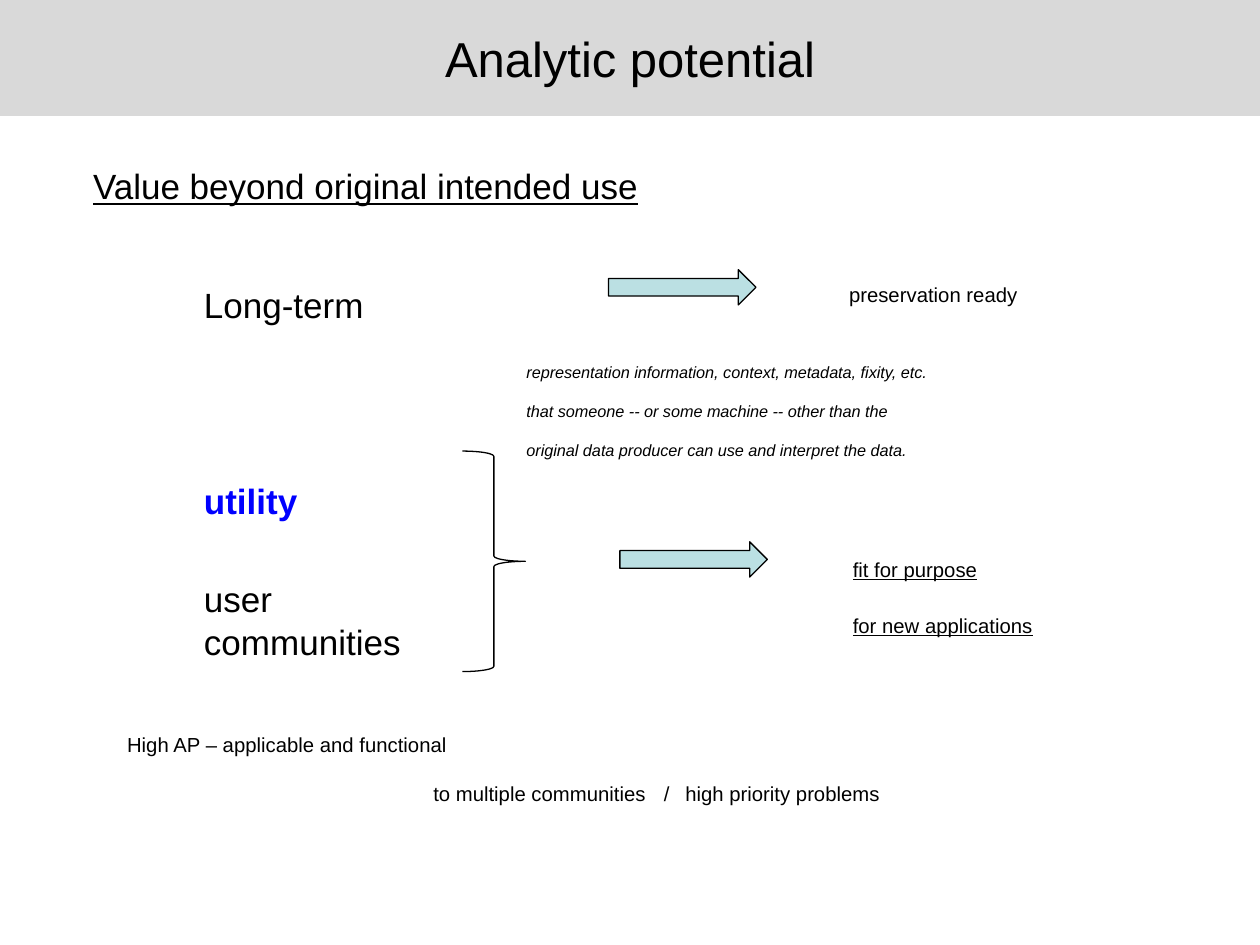
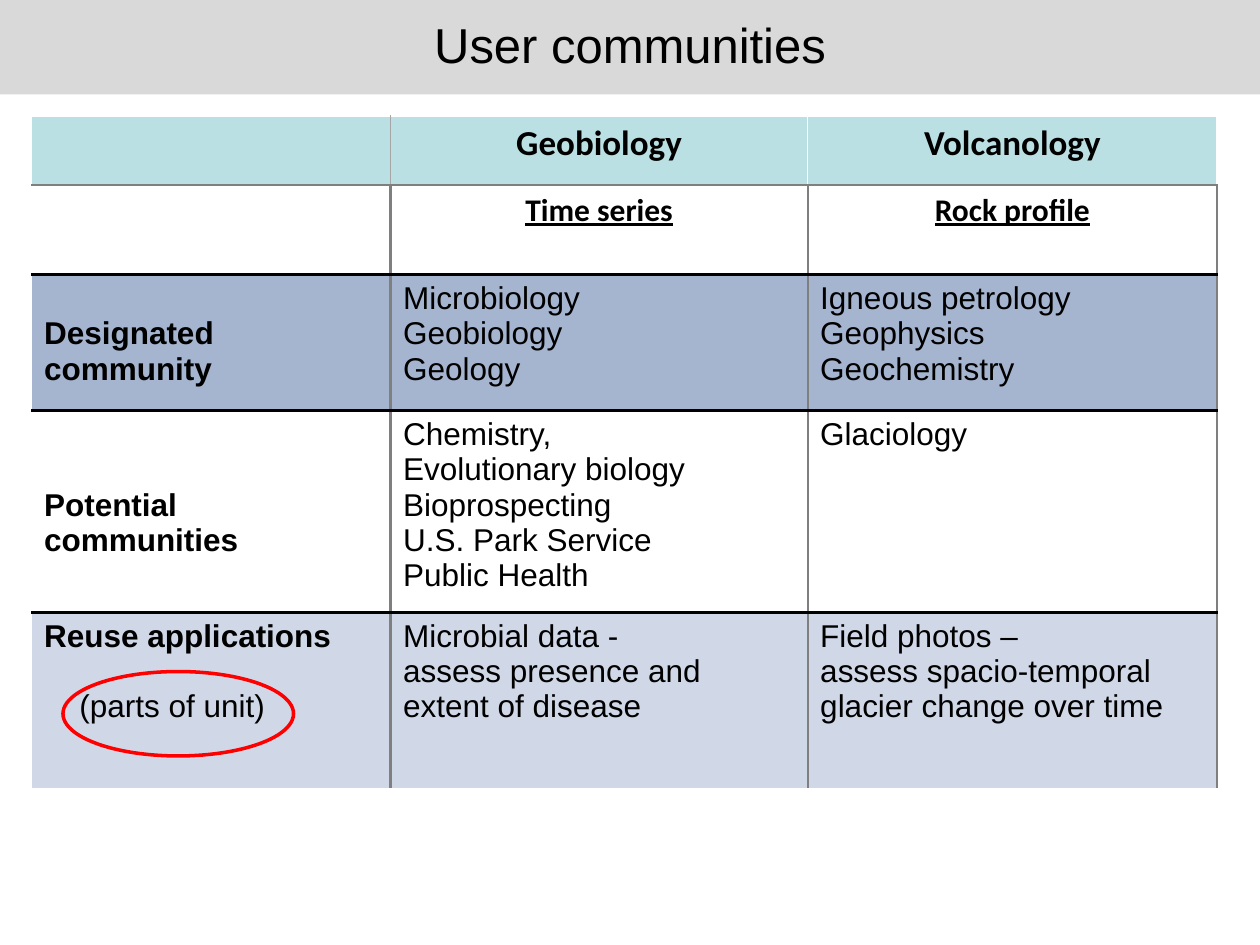
from dataclasses import dataclass

from lxml.etree import SubElement
from pptx import Presentation
from pptx.dml.color import RGBColor
from pptx.enum.shapes import MSO_SHAPE as Shape
from pptx.enum.text import MSO_ANCHOR as Anchor, PP_ALIGN as Align
from pptx.oxml.ns import qn
from pptx.util import Inches, Pt


@dataclass(frozen=True)
class Theme:
    font: str = "Arial"
    heading_font: str = "Calibri"
    black: str = "000000"
    white: str = "FFFFFF"
    band: str = "D9D9D9"
    teal: str = "BBE0E3"
    blue: str = "0000FF"
    red: str = "FF0000"
    slate: str = "A5B4CF"
    pale: str = "D0D8E8"
    rule: str = "7F7F7F"
    light_rule: str = "A6A6A6"
    title: float = 28
    body: float = 20
    table: float = 18
    label: float = 11.6
    note: float = 9.3


THEME = Theme()
COLUMN_WIDTHS = (2.85, 3.31, 3.25)
ROW_HEIGHTS = (0.55, 0.71, 1.08, 1.5, 1.4)
ROW_FILLS = (THEME.teal, THEME.white, THEME.slate, THEME.white, THEME.pale)
HEADINGS = (
    ("", "Geobiology", "Volcanology"),
    ("", "Time series", "Rock profile"),
)
COMMUNITIES = (
    (
        ("Designated", "community"),
        ("Microbiology", "Geobiology", "Geology"),
        ("Igneous petrology", "Geophysics", "Geochemistry"),
    ),
    (
        ("Potential communities",),
        ("Chemistry,", "Evolutionary biology", "Bioprospecting",
         "U.S. Park Service", "Public Health"),
        ("Glaciology",),
    ),
    (
        ("Reuse applications",),
        ("Microbial data -", "assess presence and extent of disease"),
        ("Field photos –", "assess spacio-temporal glacier change over time"),
    ),
)
LABEL_TOP_MARGINS = (0.33, 0.61, 0.05)


def rgb(value):
    return RGBColor.from_string(value)


def set_font(para, size, color=THEME.black, name=THEME.font,
             bold=False, italic=False, underline=False):
    font = para.font
    font.name, font.size = name, Pt(size)
    font.bold, font.italic, font.underline = bold, italic, underline
    font.color.rgb = rgb(color)


def set_indent(para, left):
    para._p.get_or_add_pPr().set("marL", str(Inches(left)))


def set_tabs(para, stops):
    tabs = SubElement(para._p.get_or_add_pPr(), qn("a:tabLst"))
    for stop in stops:
        SubElement(tabs, qn("a:tab"), pos=str(Inches(stop)), algn="l")


def add_line(frame, text, size, indent=0, gap=0, spacing=None, tabs=(), **style):
    para = frame.paragraphs[0]
    if para.text:
        para = frame.add_paragraph()
    para.text = text
    set_indent(para, indent)
    if gap:
        para.space_before = Pt(gap)
    if spacing:
        para.line_spacing = spacing
    if tabs:
        set_tabs(para, tabs)
    set_font(para, size, **style)
    return para


def add_box(page, left, top, width, height):
    box = page.shapes.add_textbox(*map(Inches, (left, top, width, height)))
    box.text_frame.word_wrap = True
    return box.text_frame


def add_preset(page, kind, bounds, fill=None, line=None, weight=0.75):
    shape = page.shapes.add_shape(kind, *map(Inches, bounds))
    shape.shadow.inherit = False
    if fill:
        shape.fill.solid()
        shape.fill.fore_color.rgb = rgb(fill)
    else:
        shape.fill.background()
    if line:
        shape.line.color.rgb = rgb(line)
        shape.line.width = Pt(weight)
    else:
        shape.line.fill.background()
    return shape


def add_page(deck, title, top, height):
    page = deck.slides.add_slide(deck.slide_layouts[6])
    band = add_preset(page, Shape.RECTANGLE, (0, top, 10, height), THEME.band)
    frame = band.text_frame
    frame.vertical_anchor = Anchor.MIDDLE
    add_line(frame, title, THEME.title).alignment = Align.CENTER
    return page


def add_arrow(page, left, top):
    add_preset(page, Shape.RIGHT_ARROW, (left, top, 1.17, 0.28),
               THEME.teal, THEME.black)


def draw_potential(deck):
    page = add_page(deck, "Analytic potential", 0, 0.92)

    body = add_box(page, 0.58, 1.26, 9.42, 3.75)
    add_line(body, "Value beyond original intended use", THEME.body, 0.06, underline=True)
    add_line(body, "Long-term", THEME.body, 0.94, 44)
    add_line(body, "utility", THEME.body, 0.94, 88, color=THEME.blue, bold=True)
    add_line(body, "user\vcommunities", THEME.body, 0.94, 32)

    add_arrow(page, 4.92, 4.3)
    purpose = add_box(page, 6.17, 4.18, 3.83, 0.9)
    add_line(purpose, "fit for purpose", THEME.label, 0.5, spacing=2.0, underline=True)
    add_line(purpose, "for new applications", THEME.label, 0.5, 4, 2.0, underline=True)
    add_preset(page, Shape.RIGHT_BRACE, (3.67, 3.58, 0.5, 1.75), line=THEME.black)

    ready = add_box(page, 6.58, 2, 3.42, 0.5)
    add_line(ready, "preservation ready", THEME.label, 0.06, spacing=2.0)
    add_arrow(page, 4.83, 2.14)

    summary = add_box(page, 0.85, 5.57, 8.32, 1.18)
    add_line(summary, "High AP – applicable and functional", THEME.label, 0.06, spacing=2.0)
    add_line(summary, "\tto multiple communities\t/\thigh priority problems",
             THEME.label, spacing=2.0, tabs=(2.49, 4.32, 4.49))

    note = add_box(page, 4.08, 2.67, 5.76, 1.18)
    for text in ("representation information, context, metadata, fixity, etc.",
                 "that someone -- or some machine -- other than the",
                 "original data producer can use and interpret the data."):
        add_line(note, text, THEME.note, spacing=2.0, italic=True)


def vertical_rule(row, edge):
    if edge == 0 or (row == 0 and edge > 1):
        return THEME.white, 1
    return (THEME.light_rule, 1) if row == 0 else (THEME.rule, 1.5)


def horizontal_rule(edge, column):
    if edge in (0, len(ROW_HEIGHTS)):
        return THEME.white, 1
    if edge == 1:
        return THEME.rule, 1.5 if column == 2 else 1
    return THEME.black, 2.25


def style_cell(cell, row, column):
    sides = (
        ("a:lnL", vertical_rule(row, column)),
        ("a:lnR", vertical_rule(row, column + 1)),
        ("a:lnT", horizontal_rule(row, column)),
        ("a:lnB", horizontal_rule(row + 1, column)),
    )
    properties = cell._tc.get_or_add_tcPr()
    for tag, (color, weight) in sides:
        line = SubElement(properties, qn(tag), w=str(Pt(weight)))
        SubElement(SubElement(line, qn("a:solidFill")), qn("a:srgbClr"), val=color)
    cell.fill.solid()
    cell.fill.fore_color.rgb = rgb(ROW_FILLS[row])


def add_communities_table(page):
    frame = page.shapes.add_table(len(ROW_HEIGHTS), len(COLUMN_WIDTHS),
                                  Inches(0.25), Inches(0.92),
                                  Inches(sum(COLUMN_WIDTHS)), Inches(sum(ROW_HEIGHTS)))
    table = frame.table
    table.first_row = table.horz_banding = False
    for column, width in zip(table.columns, COLUMN_WIDTHS):
        column.width = Inches(width)
    for row, height in zip(table.rows, ROW_HEIGHTS):
        row.height = Inches(height)
    for row in range(len(ROW_HEIGHTS)):
        for column in range(len(COLUMN_WIDTHS)):
            style_cell(table.cell(row, column), row, column)
    return table


def draw_communities(deck):
    page = add_page(deck, "User communities", -0.06, 0.81)
    table = add_communities_table(page)

    for row, texts in enumerate(HEADINGS):
        size = THEME.table if row else THEME.body
        for column, text in enumerate(texts):
            para = add_line(table.cell(row, column).text_frame, text, size, bold=True,
                            name=THEME.heading_font, underline=row == 1)
            para.alignment = Align.CENTER

    for row, texts in enumerate(COMMUNITIES, start=len(HEADINGS)):
        for column, lines in enumerate(texts):
            for text in lines:
                add_line(table.cell(row, column).text_frame, text, THEME.table,
                         bold=column == 0)
        table.cell(row, 0).margin_top = Inches(LABEL_TOP_MARGINS[row - len(HEADINGS)])
    add_line(table.cell(4, 0).text_frame, "(parts of unit)", THEME.table, 0.28, 20)

    add_preset(page, Shape.OVAL, (0.5, 5.33, 1.83, 0.67), line=THEME.red, weight=2)


def main():
    deck = Presentation()
    deck.slide_width, deck.slide_height = Inches(10), Inches(7.5)
    draw_potential(deck)
    draw_communities(deck)
    deck.save("out.pptx")


if __name__ == "__main__":
    main()
